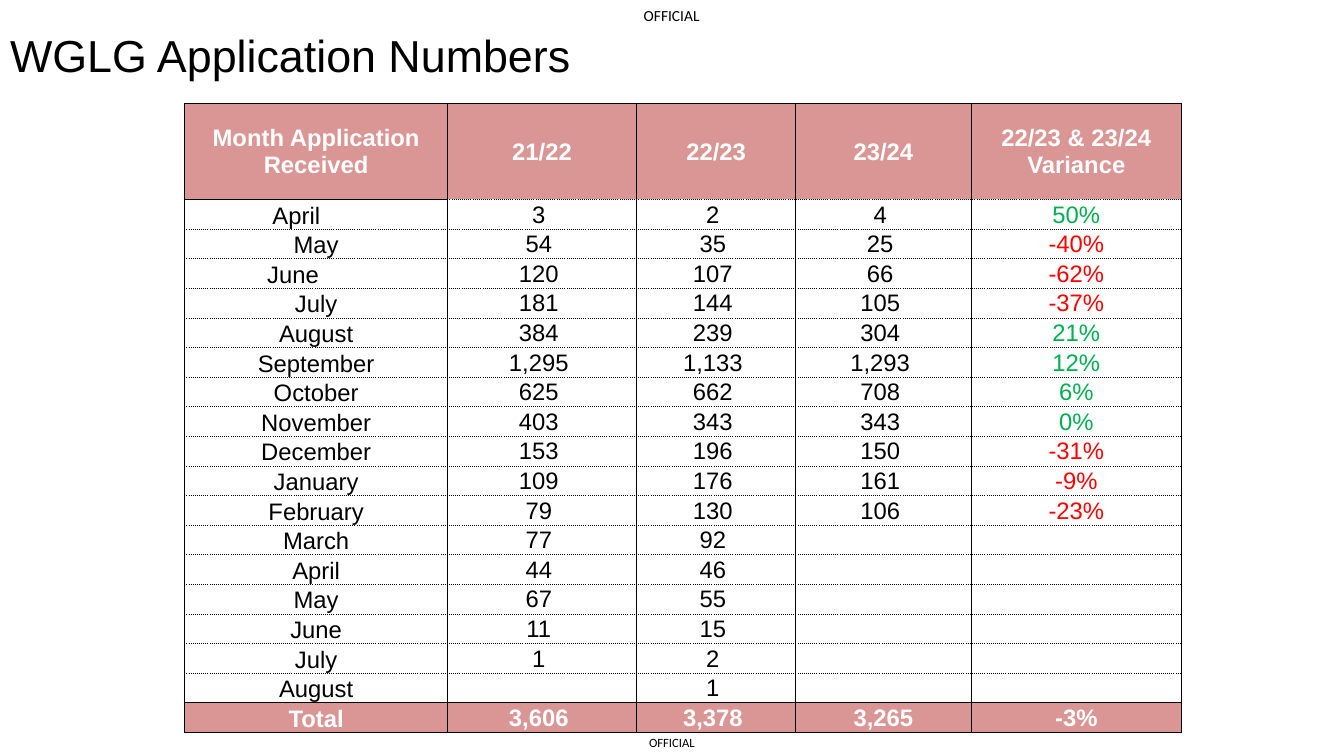
"""Build the WGLG application numbers slide."""
from dataclasses import dataclass

from lxml import etree
from pptx import Presentation
from pptx.dml.color import RGBColor
from pptx.enum.text import MSO_ANCHOR, PP_ALIGN
from pptx.oxml.ns import qn
from pptx.util import Pt

CENTER, LEFT = PP_ALIGN.CENTER, PP_ALIGN.LEFT
TOP, MIDDLE, BOTTOM = MSO_ANCHOR.TOP, MSO_ANCHOR.MIDDLE, MSO_ANCHOR.BOTTOM

TITLE = "WGLG Application Numbers"
MARKING = "OFFICIAL"
HEADINGS = ("Month Application Received", "21/22", "22/23", "23/24",
            "22/23 & 23/24 Variance")
MONTHS = [
    ("April", "3", "2", "4", "50%"),
    ("May", "54", "35", "25", "-40%"),
    ("June", "120", "107", "66", "-62%"),
    ("July", "181", "144", "105", "-37%"),
    ("August", "384", "239", "304", "21%"),
    ("September", "1,295", "1,133", "1,293", "12%"),
    ("October", "625", "662", "708", "6%"),
    ("November", "403", "343", "343", "0%"),
    ("December", "153", "196", "150", "-31%"),
    ("January", "109", "176", "161", "-9%"),
    ("February", "79", "130", "106", "-23%"),
    ("March", "77", "92", "", ""),
    ("April", "44", "46", "", ""),
    ("May", "67", "55", "", ""),
    ("June", "11", "15", "", ""),
    ("July", "1", "2", "", ""),
    ("August", "", "1", "", ""),
]
TOTALS = ("Total", "3,606", "3,378", "3,265", "-3%")
ROWS = [HEADINGS, *MONTHS, TOTALS]
LAST = len(ROWS) - 1
VARIANCE = len(HEADINGS) - 1

SLIDE_SIZE = (960, 540)
TITLE_BOX = (0, 16, 573, 85)
MARKINGS = [((448.5, 0, 62.6, 22.3), 11), ((453.6, 520.6, 52.6, 19.4), 9)]
TABLE_LEFT, TABLE_TOP = 131.9, 73.9
COLUMN_WIDTHS = (187.9, 134.9, 113.8, 125.3, 150.2)
HEADER_HEIGHT, ROW_HEIGHT = 68.6, 21.17
CELL_INSET = 0.72
NUMBER_INDENT = 4.7
RIGHT_INDENTS = {(1, 0): 28.4, (3, 0): 33.1, (LAST, 3): 0}


@dataclass(frozen=True)
class Theme:
    """Colours, fonts and type sizes."""
    ink: str = "000000"
    light: str = "FFFFFF"
    band: str = "D99694"
    rise: str = "00B050"
    fall: str = "FF0000"
    font: str = "Arial"
    marking_font: str = "Calibri"
    title_size: int = 32
    table_size: int = 17
    border: float = 0.5


THEME = Theme()


def write(frame, text, *, size, font=THEME.font, color=THEME.ink, bold=False,
          align=CENTER):
    """Put one formatted run into a text frame, or size its empty line."""
    paragraph = frame.paragraphs[0]
    paragraph.alignment = align
    if not text:
        etree.SubElement(paragraph._p, qn("a:endParaRPr"), sz=str(size * 100))
        return
    run = paragraph.add_run()
    run.text = text
    run.font.name, run.font.size, run.font.bold = font, Pt(size), bold
    run.font.color.rgb = RGBColor.from_string(color)


def set_borders(cell, **dashes):
    """Draw the four edges of a cell with the given dash styles."""
    properties = cell._tc.get_or_add_tcPr()
    for edge in ("L", "R", "T", "B"):
        line = etree.SubElement(properties, qn(f"a:ln{edge}"),
                                w=str(int(Pt(THEME.border))))
        fill = etree.SubElement(line, qn("a:solidFill"))
        etree.SubElement(fill, qn("a:srgbClr"), val=THEME.ink)
        etree.SubElement(line, qn("a:prstDash"), val=dashes.get(edge, "solid"))


def edge_dashes(row, column):
    """Return the dotted horizontal edges of a cell."""
    dotted_top = 0 < row < LAST and (row, column) != (1, 0)
    dotted_bottom = row < LAST - 1 and (row, column) != (0, 0)
    return {edge: "sysDot" for edge, dotted in
            (("T", dotted_top), ("B", dotted_bottom)) if dotted}


def fill_cell(cell, text, row, column):
    """Format one table cell and write its text."""
    banded = row in (0, LAST)
    set_borders(cell, **edge_dashes(row, column))
    if banded:
        cell.fill.solid()
        cell.fill.fore_color.rgb = RGBColor.from_string(THEME.band)
    else:
        cell.fill.background()
    number = row > 0 and 0 < column < VARIANCE
    indent = RIGHT_INDENTS.get((row, column), NUMBER_INDENT if number else 0)
    cell.margin_left = cell.margin_top = Pt(CELL_INSET)
    cell.margin_right, cell.margin_bottom = Pt(CELL_INSET + indent), Pt(0)
    cell.vertical_anchor = BOTTOM if row and not column else MIDDLE
    color = THEME.light if banded else THEME.ink
    if column == VARIANCE and not banded:
        color = THEME.fall if text.startswith("-") else THEME.rise
    write(cell.text_frame, text, size=THEME.table_size, color=color, bold=banded)


def add_title(slide):
    """Place the slide title."""
    title = slide.shapes.title
    title.left, title.top, title.width, title.height = map(Pt, TITLE_BOX)
    title.text_frame.vertical_anchor = TOP
    write(title.text_frame, TITLE, size=THEME.title_size, align=LEFT)


def add_markings(slide):
    """Place the marking at the head and foot of the slide."""
    for box, size in MARKINGS:
        frame = slide.shapes.add_textbox(*map(Pt, box)).text_frame
        frame.word_wrap = True
        frame.vertical_anchor = MIDDLE
        frame.margin_left = frame.margin_right = Pt(0)
        frame.margin_top = frame.margin_bottom = Pt(0)
        write(frame, MARKING, size=size, font=THEME.marking_font)


def add_numbers(slide):
    """Add the table of application numbers."""
    heights = [HEADER_HEIGHT] + [ROW_HEIGHT] * LAST
    table = slide.shapes.add_table(
        len(ROWS), len(HEADINGS), Pt(TABLE_LEFT), Pt(TABLE_TOP),
        Pt(sum(COLUMN_WIDTHS)), Pt(sum(heights))).table
    table.first_row = table.horz_banding = False
    for column, width in zip(table.columns, COLUMN_WIDTHS):
        column.width = Pt(width)
    for row, (values, height) in enumerate(zip(ROWS, heights)):
        table.rows[row].height = Pt(height)
        for column, text in enumerate(values):
            fill_cell(table.cell(row, column), text, row, column)


def main():
    """Create and save the slide."""
    deck = Presentation()
    deck.slide_width, deck.slide_height = map(Pt, SLIDE_SIZE)
    slide = deck.slides.add_slide(deck.slide_layouts[5])
    add_markings(slide)
    add_title(slide)
    add_numbers(slide)
    deck.save("out.pptx")


if __name__ == "__main__":
    main()
